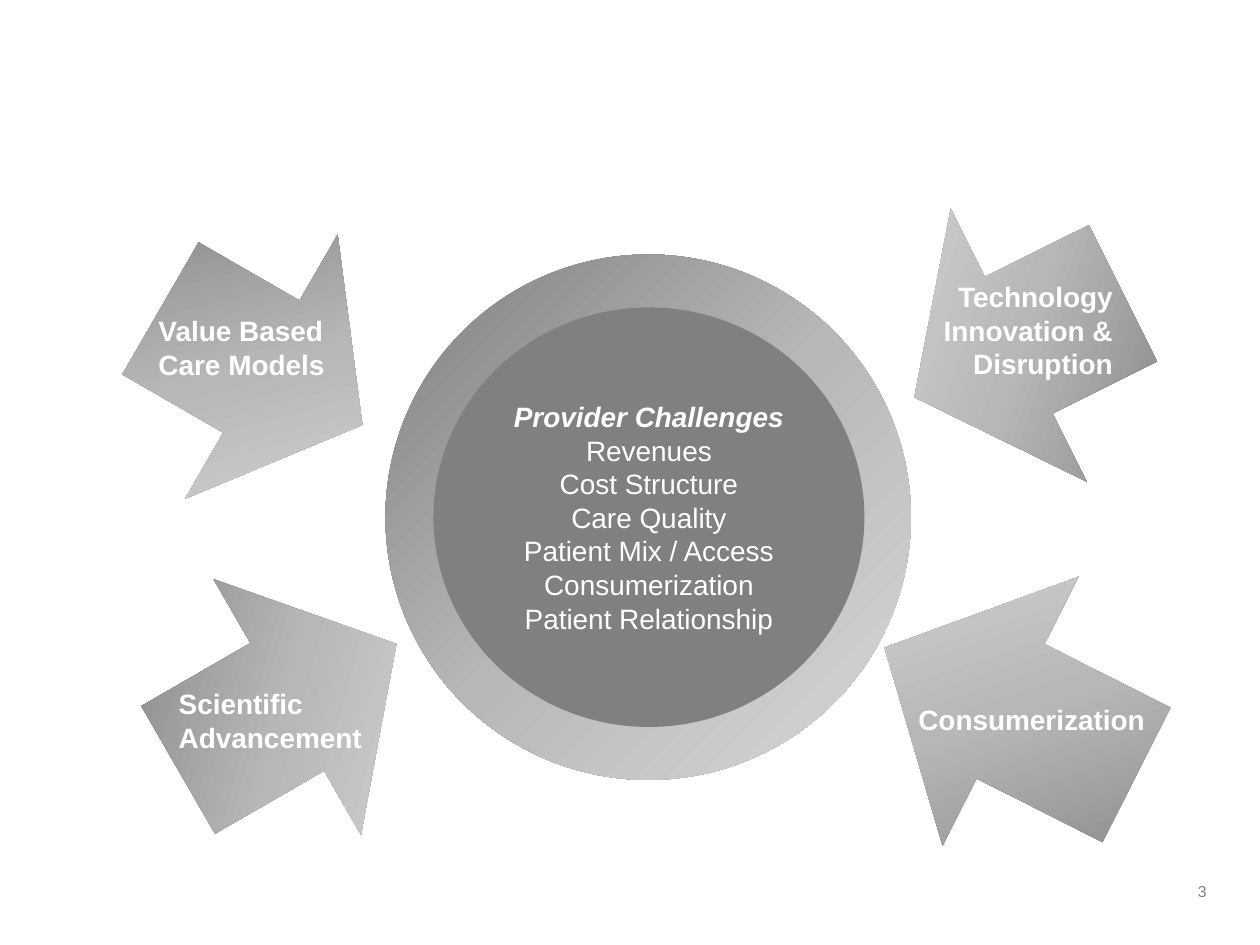
from copy import deepcopy
from dataclasses import dataclass

from pptx import Presentation, util as u
from pptx.dml.color import RGBColor
from pptx.enum import shapes, text

SLIDE_WIDTH, SLIDE_HEIGHT = u.Inches(10), u.Inches(7.5)
COLUMN, ROW = SLIDE_WIDTH / 100, SLIDE_HEIGHT / 75

WHITE = RGBColor(0xFF, 0xFF, 0xFF)
DARK = RGBColor(0x80, 0x80, 0x80)
MIDDLE = RGBColor(0xB7, 0xB7, 0xB7)
LIGHT = RGBColor(0xD9, 0xD9, 0xD9)


@dataclass(frozen=True)
class Area:
    """A place on the grid of 100 columns and 75 rows."""
    column: float
    row: float
    columns: float
    rows: float

    def lengths(self) -> tuple:
        return (u.Emu(round(self.column * COLUMN)), u.Emu(round(self.row * ROW)),
                u.Emu(round(self.columns * COLUMN)), u.Emu(round(self.rows * ROW)))


@dataclass(frozen=True)
class Force:
    """An outside pressure: an arrow aimed at the hub, with its label."""
    arrow: Area
    rotation: float
    label: Area
    lines: tuple
    align: text.PP_ALIGN = text.PP_ALIGN.LEFT
    wrap: bool = True


HUB_RING = Area(30.6, 20.2, 41.7, 41.7)
HUB = Area(34.4, 24.4, 34.2, 33.3)
PAGE_NUMBER = Area(94.1, 70, 3, 1.5)
HEADING = "Provider Challenges"
CHALLENGES = ("Revenues", "Cost Structure", "Care Quality",
              "Patient Mix / Access", "Consumerization", "Patient Relationship")
FORCES = (
    Force(Area(11.5, 17, 18.5, 24.2), 30,
          Area(11.6, 24.4, 16.4, 6.4), ("Value Based Care Models",)),
    Force(Area(69, 44.5, 22.4, 23.9), 206.8,
          Area(71.9, 55.3, 20.2, 3.7), ("Consumerization",), wrap=False),
    Force(Area(12.8, 44.4, 20, 23.4), 330,
          Area(13.2, 54, 18.1, 6.4), ("Scientific Advancement",)),
    Force(Area(71.6, 15.3, 18.5, 24.2), 153.5,
          Area(65.5, 21.7, 23.8, 9.1), ("Technology", "Innovation & Disruption"),
          align=text.PP_ALIGN.RIGHT),
)


def write(frame, lines, *, size=16, color=WHITE, bold=False, italic=False,
          align=text.PP_ALIGN.LEFT, anchor=text.MSO_ANCHOR.TOP, wrap=True):
    """Fill a text frame, one paragraph a line, and return its paragraphs."""
    frame.word_wrap = wrap
    frame.vertical_anchor = anchor
    frame.text = "\n".join(lines)
    for paragraph in frame.paragraphs:
        paragraph.alignment = align
        for run in paragraph.runs:
            run.font.name = "Arial"
            run.font.size = u.Pt(size)
            run.font.bold, run.font.italic = bold, italic
            run.font.color.rgb = color
    return frame.paragraphs


def add_plain_shape(slide, kind: shapes.MSO_SHAPE, area: Area):
    shape = slide.shapes.add_shape(kind, *area.lengths())
    shape.shadow.inherit = False
    shape.line.fill.background()
    return shape


def shade(shape) -> None:
    """Run a gradient from dark to light, top left to bottom right."""
    fill = shape.fill
    fill.gradient()
    fill.gradient_angle = 315  # counted anticlockwise
    stop_list = shape._element.spPr.gradFill.gsLst
    stop_list.insert(1, deepcopy(stop_list[0]))
    for stop, position, color in zip(fill.gradient_stops, (0, 0.5, 1),
                                     (DARK, MIDDLE, LIGHT)):
        stop.position = position
        stop.color.rgb = color


def add_hub(slide) -> None:
    shade(add_plain_shape(slide, shapes.MSO_SHAPE.OVAL, HUB_RING))
    hub = add_plain_shape(slide, shapes.MSO_SHAPE.OVAL, HUB)
    hub.fill.solid()
    hub.fill.fore_color.rgb = DARK
    heading = write(hub.text_frame, (HEADING, *CHALLENGES),
                    align=text.PP_ALIGN.CENTER, anchor=text.MSO_ANCHOR.MIDDLE)[0]
    heading.runs[0].font.bold = heading.runs[0].font.italic = True


def add_force(slide, force: Force) -> None:
    arrow = add_plain_shape(slide, shapes.MSO_SHAPE.RIGHT_ARROW, force.arrow)
    arrow.rotation = force.rotation
    shade(arrow)
    label = slide.shapes.add_textbox(*force.label.lengths())
    write(label.text_frame, force.lines, bold=True, align=force.align, wrap=force.wrap)


def main() -> None:
    deck = Presentation()
    deck.slide_width, deck.slide_height = SLIDE_WIDTH, SLIDE_HEIGHT
    slide = deck.slides.add_slide(deck.slide_layouts.get_by_name("Blank"))
    number = slide.shapes.add_textbox(*PAGE_NUMBER.lengths())
    write(number.text_frame, ("3",), size=9, color=DARK, anchor=text.MSO_ANCHOR.MIDDLE)
    add_hub(slide)
    for force in FORCES:
        add_force(slide, force)
    deck.save("out.pptx")


if __name__ == "__main__":
    main()
